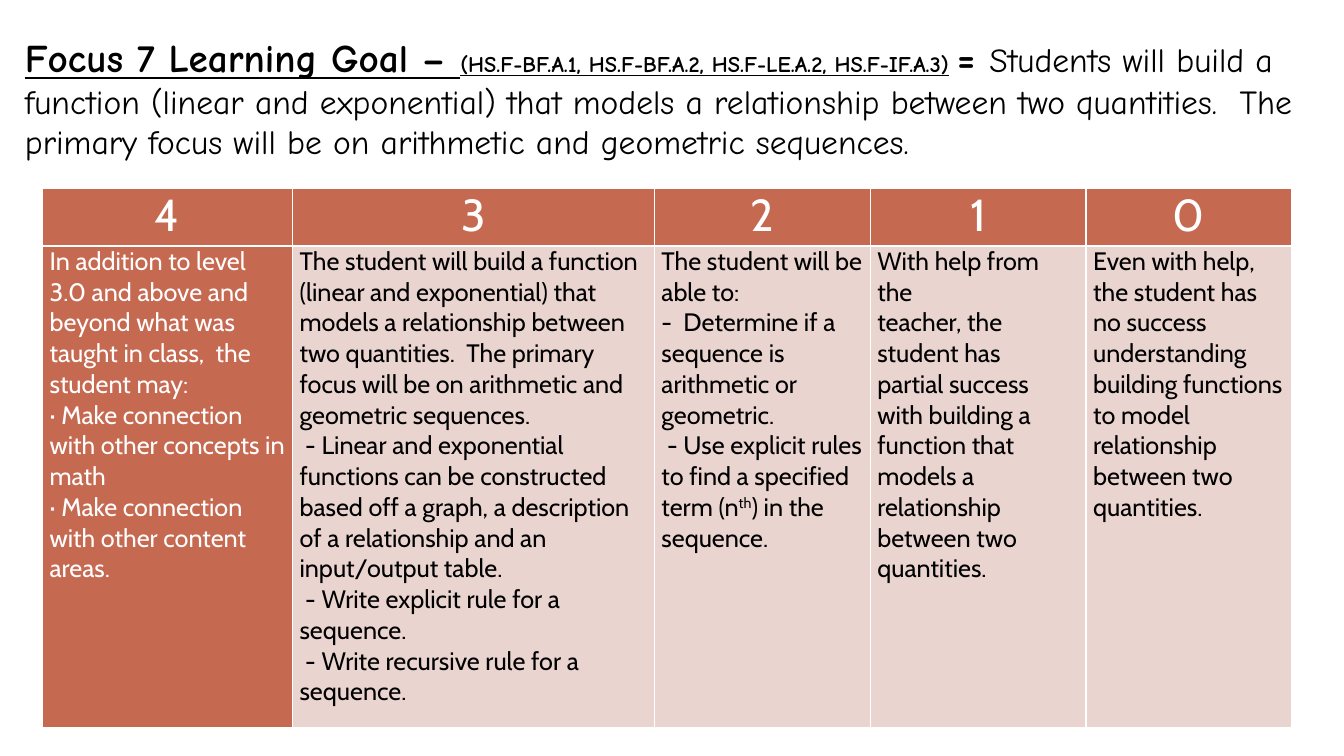
from pptx import Presentation
from pptx.dml.color import RGBColor
from pptx.enum.text import MSO_ANCHOR, PP_ALIGN
from pptx.oxml import parse_xml
from pptx.oxml.ns import nsdecls
from pptx.util import Cm, Pt

# Content
GOAL = [
    ("Focus 7 Learning Goal – ", "head"),
    ("(HS.F-BF.A.1, HS.F-BF.A.2, HS.F-LE.A.2, HS.F-IF.A.3)", "code"),
    (" ", "gap"),
    ("= ", "sign"),
    ("Students will build a function (linear and exponential) that models "
     "a relationship between two quantities.  The primary focus will be on "
     "arithmetic and geometric sequences.", "goal"),
]

# Each level: score, column width in cm, paragraphs
LEVELS = [
    ("4", 6.3, [
        "In addition to level 3.0 and above and beyond what was taught in "
        "class, \u00a0the student may:",
        "· Make connection with other concepts in math",
        "· Make connection with other content areas."]),
    ("3", 9.12, [
        "The student will build a function (linear and exponential) that "
        "models a relationship between two quantities.  The primary focus "
        "will be on arithmetic and geometric sequences.",
        " - Linear and exponential functions can be constructed based off a "
        "graph, a description of a relationship and an input/output table.",
        " - Write explicit rule for a sequence.",
        " - Write recursive rule for a sequence."]),
    ("2", 5.44, [
        "The student will be able to:",
        "-  Determine if a sequence is arithmetic or geometric.",
        (" - Use explicit rules to find a specified term (n", "th",
         ") in the sequence.")]),
    ("1", 5.44, [
        "With help from the",
        "teacher, the student has",
        "partial success with building a function that models a "
        "relationship between two quantities."]),
    ("0", 5.18, [
        "Even with help, the student has no success understanding building "
        "functions to model relationship between two quantities."]),
]

# Theme
COLOR = {"rust": "C66951", "pink": "EAD4D0", "white": "FFFFFF", "black": "000000"}
TITLE = {"name": "Comic Neue", "bold": True, "underline": False, "color": "black"}
BODY = {"name": "Cabin", "bold": False, "size": 18}
STYLE = {
    "head": {**TITLE, "size": 28, "underline": True},
    "code": {**TITLE, "size": 16, "underline": True},
    "gap": {**TITLE, "size": 16},
    "sign": {**TITLE, "size": 28},
    "goal": {**TITLE, "size": 24, "bold": False},
    "score": {**BODY, "size": 32, "color": "white"},
    "light": {**BODY, "color": "white"},
    "dark": {**BODY, "color": "black"},
}
ROWS = (1.45, 12.14)
PAD = {"margin_left": Cm(0.18), "margin_right": Cm(0.18),
       "margin_top": 0, "margin_bottom": 0}


def rgb(name):
    return RGBColor.from_string(COLOR[name])


def apply(item, values):
    for key, value in values.items():
        setattr(item, key, value)


def add_run(para, text, style, rise=0):
    run = para.add_run()
    run.text = text
    values = dict(STYLE[style])
    run.font.color.rgb = rgb(values.pop("color"))
    apply(run.font, {**values, "size": Pt(values["size"])})
    if rise:
        run.font._element.set("baseline", str(rise * 1000))


def add_edges(cell):
    props = cell._tc.get_or_add_tcPr()
    for spot, side in enumerate("LRTB"):
        props.insert(spot, parse_xml(
            f'<a:ln{side} {nsdecls("a")} w="{Pt(1)}"><a:solidFill>'
            f'<a:srgbClr val="{COLOR["white"]}"/></a:solidFill></a:ln{side}>'))


def fill_cell(cell, paras, style, fill, align):
    apply(cell, PAD)
    cell.fill.solid()
    cell.fill.fore_color.rgb = rgb(fill)
    add_edges(cell)
    frame = cell.text_frame
    for num, parts in enumerate(paras):
        para = frame.add_paragraph() if num else frame.paragraphs[0]
        para.alignment = align
        if isinstance(parts, str):
            parts = (parts,)
        for spot, text in enumerate(parts):
            # Every second part is a superscript
            add_run(para, text, style, 30 * (spot % 2))


def add_goal(slide):
    box = slide.shapes.add_textbox(Cm(0.38), Cm(0.2), Cm(33.17), Cm(4.52))
    frame = box.text_frame
    apply(frame, {"word_wrap": True, "vertical_anchor": MSO_ANCHOR.MIDDLE})
    for text, style in GOAL:
        add_run(frame.paragraphs[0], text, style)


def add_scale(slide):
    wide = sum(width for _, width, _ in LEVELS)
    grid = slide.shapes.add_table(len(ROWS), len(LEVELS), Cm(1.07), Cm(4.75),
                                  Cm(wide), Cm(sum(ROWS))).table
    grid.horz_banding = False
    for row, height in zip(grid.rows, ROWS):
        row.height = Cm(height)
    for col, (score, width, paras) in enumerate(LEVELS):
        grid.columns[col].width = Cm(width)
        fill_cell(grid.cell(0, col), [score], "score", "rust", PP_ALIGN.CENTER)
        style, fill = ("dark", "pink") if col else ("light", "rust")
        fill_cell(grid.cell(1, col), paras, style, fill, PP_ALIGN.LEFT)


def main():
    deck = Presentation()
    apply(deck, {"slide_width": Cm(33.87), "slide_height": Cm(19.05)})
    slide = deck.slides.add_slide(deck.slide_layouts[6])
    add_scale(slide)
    add_goal(slide)
    deck.save("out.pptx")


if __name__ == "__main__":
    main()
